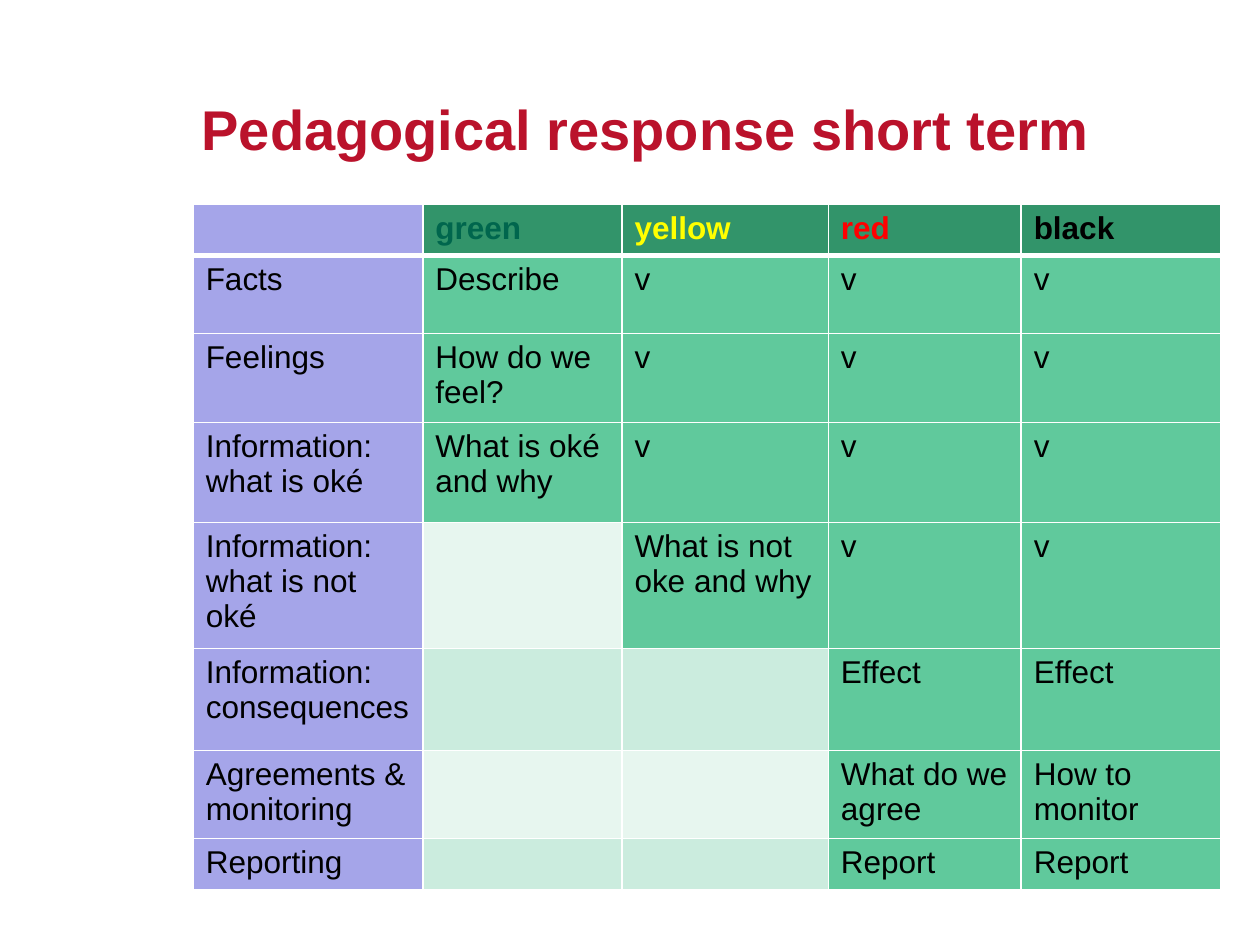
from dataclasses import dataclass

from lxml import etree
from pptx import Presentation
from pptx import util as u
from pptx.dml.color import RGBColor
from pptx.enum import text
from pptx.oxml import ns


@dataclass(frozen=True)
class Theme:
    """Colours, font and type sizes of the slide."""
    font: str = "Arial"
    title_size: int = 32
    table_size: int = 18
    title: str = "BA122B"
    body: str = "000000"
    label_fill: str = "A5A5E9"
    header_fill: str = "32946A"
    filled: str = "60C99C"
    empty_bands: tuple = ("E7F6EF", "CBECDE")
    border: str = "FFFFFF"
    headers: tuple = ("000000", "00664D", "FFFF00", "FF0000", "000000")


THEME = Theme()
COLUMN_WIDTHS = (131.2, 113.8, 118, 110.2, 113.8)
ROW_HEIGHTS = (29.2, 44.6, 51, 57, 72, 58.2, 50.4, 29.2)
RESPONSES = (
    ("", "green", "yellow", "red", "black"),
    ("Facts", "Describe", "v", "v", "v"),
    ("Feelings", "How do we feel?", "v", "v", "v"),
    ("Information: what is oké", "What is oké and why", "v", "v", "v"),
    ("Information: what is not oké", "", "What is not oke and why", "v", "v"),
    ("Information:\nconsequences", "", "", "Effect", "Effect"),
    ("Agreements & monitoring", "", "", "What do we agree", "How to monitor"),
    ("Reporting", "", "", "Report", "Report"),
)


def format_text(text_frame, size, color, bold):
    """Apply the theme font to every run."""
    for paragraph in text_frame.paragraphs:
        for run in paragraph.runs:
            run.font.name = THEME.font
            run.font.size = u.Pt(size)
            run.font.bold = bold
            run.font.color.rgb = RGBColor.from_string(color)


def add_title(slide, wording):
    """Place and format the title placeholder."""
    title = slide.shapes.title
    title.left, title.top = u.Pt(108), u.Pt(28)
    title.width, title.height = u.Pt(582), u.Pt(90)
    frame = title.text_frame
    frame.text = wording
    frame.word_wrap = True
    frame.vertical_anchor = text.MSO_ANCHOR.MIDDLE
    frame.paragraphs[0].alignment = text.PP_ALIGN.LEFT
    format_text(frame, THEME.title_size, THEME.title, True)


def set_borders(cell, widths):
    """Draw the left, right, top and bottom borders of a cell."""
    properties = cell._tc.get_or_add_tcPr()
    for position, (side, width) in enumerate(zip("LRTB", widths)):
        line = etree.Element(ns.qn(f"a:ln{side}"), w=str(u.Pt(width)))
        fill = etree.SubElement(line, ns.qn("a:solidFill"))
        etree.SubElement(fill, ns.qn("a:srgbClr"), val=THEME.border)
        properties.insert(position, line)


def cell_fill(row, column, wording):
    """Choose the fill from the position and content of a cell."""
    if column == 0:
        return THEME.label_fill
    if row == 0:
        return THEME.header_fill
    return THEME.filled if wording else THEME.empty_bands[row % 2]


def format_cell(cell, row, column, wording):
    """Write one cell with its fill, borders and font."""
    cell.text = wording
    cell.fill.solid()
    cell.fill.fore_color.rgb = RGBColor.from_string(cell_fill(row, column, wording))
    set_borders(cell, (1, 1, 3 if row == 1 else 1, 3 if row == 0 else 1))
    color = THEME.headers[column] if row == 0 else THEME.body
    format_text(cell.text_frame, THEME.table_size, color, row == 0)


def add_response_table(slide):
    """Add the table of responses per colour level."""
    frame = slide.shapes.add_table(
        len(RESPONSES), len(COLUMN_WIDTHS), u.Pt(110.4), u.Pt(116.8),
        u.Pt(sum(COLUMN_WIDTHS)), u.Pt(sum(ROW_HEIGHTS)))
    table = frame.table
    table.horz_banding = False
    for column, width in zip(table.columns, COLUMN_WIDTHS):
        column.width = u.Pt(width)
    for row, height in zip(table.rows, ROW_HEIGHTS):
        row.height = u.Pt(height)
    for row, wordings in enumerate(RESPONSES):
        for column, wording in enumerate(wordings):
            format_cell(table.cell(row, column), row, column, wording)


def main():
    """Build and save the slide."""
    presentation = Presentation()
    presentation.slide_width, presentation.slide_height = u.Pt(720), u.Pt(540)
    slide = presentation.slides.add_slide(presentation.slide_layouts[5])
    add_title(slide, "Pedagogical response short term")
    add_response_table(slide)
    presentation.save("out.pptx")


if __name__ == "__main__":
    main()
